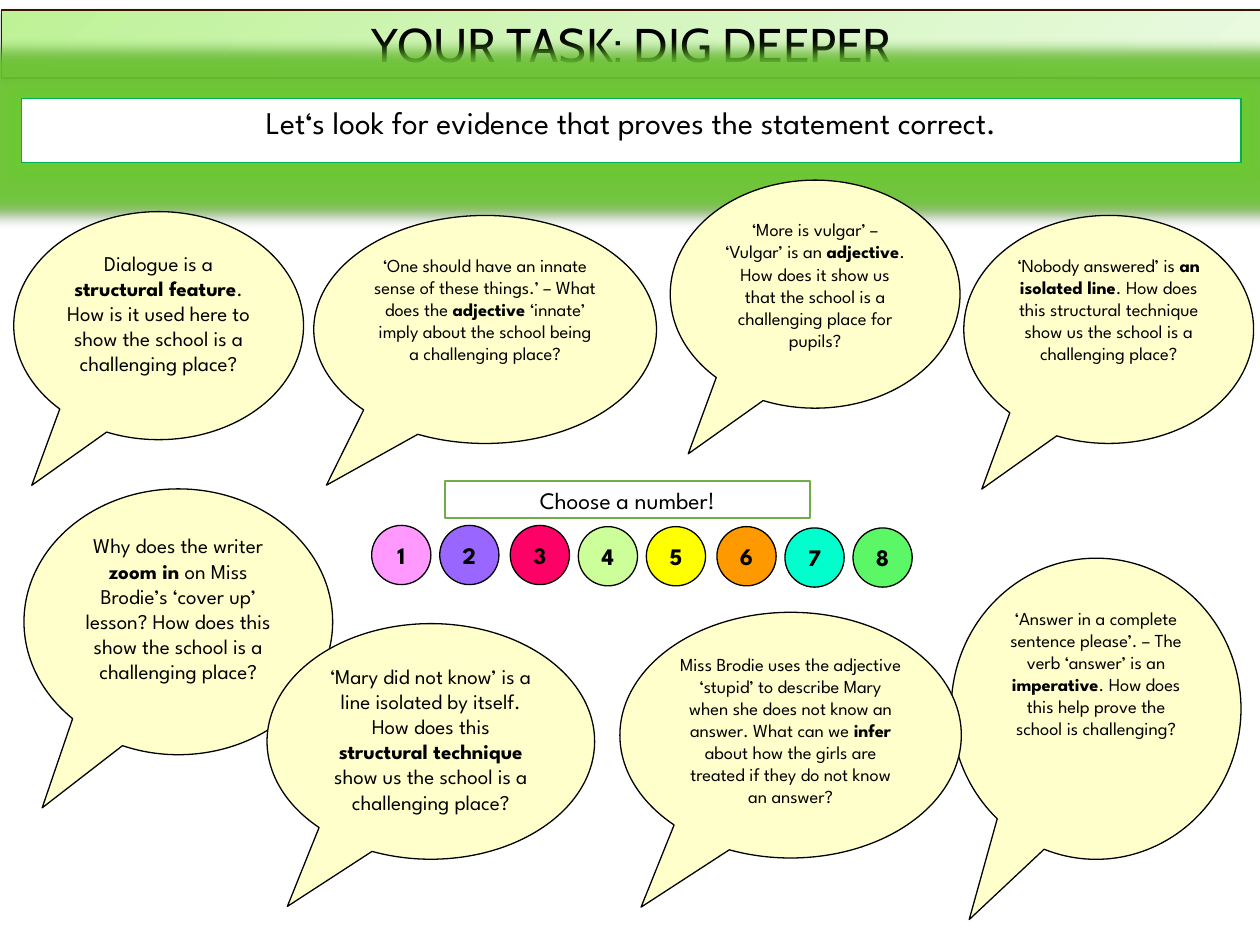
"""Build the "Dig deeper" task slide with speech bubbles and numbered circles."""
import pptx
import pptx.dml.color
import pptx.enum.shapes
import pptx.enum.text
import pptx.oxml
import pptx.oxml.ns
import pptx.util

Inches, Pt = pptx.util.Inches, pptx.util.Pt
SHAPE = pptx.enum.shapes.MSO_SHAPE
ANCHOR = pptx.enum.text.MSO_ANCHOR

COLORS = {
    "black": "000000", "white": "FFFFFF", "bubble": "FFFFCC",
    "title_line": "3C1301", "statement_line": "00B050",
    "choose_line": "70AD47", "glow": "6CC932",
}
TITLE_STOPS = [(0, "BEF297"), (50, "D5F6C0"), (100, "EAFAE0")]
TITLE_FONT, BODY_FONT = "Cabin", "League Spartan"
TAIL = (-0.438, 0.7)

BUBBLES = [
    ((0.11, 1.68, 2.3, 1.81), TAIL, 12,
     ("Dialogue is a ", "structural feature",
      ". How is it used here to show the school is a challenging place?")),
    ((2.49, 1.71, 2.72, 1.81), (-0.463, 0.683), 10.5,
     ("‘One should have an innate sense of these things.’ – What does the ", "adjective ",
      "‘innate’ imply about the school being a challenging place?")),
    ((5.32, 1.43, 2.3, 1.81), TAIL, 10.5,
     ("‘More is vulgar’ – ‘Vulgar’ is an ", "adjective",
      ". How does it show us that the school is a challenging place for pupils?")),
    ((0.19, 3.88, 2.45, 2.11), (-0.441, 0.7), 12,
     ("Why does the writer ", "zoom in",
      " on Miss Brodie’s ‘cover up’ lesson? How does this show the school is a challenging place?")),
    ((7.65, 1.71, 2.3, 1.81), TAIL, 10.5,
     ("‘Nobody answered’ is ", "an isolated line",
      ". How does this structural technique show us the school is a challenging place?")),
    ((7.55, 4.43, 2.3, 2.39), TAIL, 10.5,
     ("‘Answer in a complete sentence please’. – The verb ‘answer’ is an ", "imperative",
      ". How does this help prove the school is challenging?")),
    ((2.12, 4.95, 2.6, 1.87), TAIL, 12,
     ("‘Mary did not know’ is a line isolated by itself. How does this ", "structural technique",
      " show us the school is a challenging place?")),
    ((4.92, 4.86, 2.71, 1.95), TAIL, 10.5,
     ("Miss Brodie uses the adjective ‘stupid’ to describe Mary when she does not know an answer. "
      "What can we ", "infer",
      " about how the girls are treated if they do not know an answer?")),
]
CIRCLE_SIZE = 0.47
CIRCLES = [
    (2.95, 4.17, "FF99FF"), (3.49, 4.17, "9966FF"), (4.05, 4.17, "FF0066"),
    (4.59, 4.18, "CCFF99"), (5.13, 4.18, "FFFF00"), (5.69, 4.18, "FF9900"),
    (6.23, 4.19, "00FFCC"), (6.77, 4.19, "5BF766"),
]


def rgb(value):
    return pptx.dml.color.RGBColor.from_string(value)


def add_box(slide, kind, box, fill, line, parts, size, font=BODY_FONT,
            bold=(False, True, False), anchor=ANCHOR.TOP, width=0.75, wrap=True):
    sp = slide.shapes.add_shape(kind, *map(Inches, box))
    sp.shadow.inherit = False
    sp.fill.solid()
    sp.fill.fore_color.rgb = rgb(fill)
    sp.line.color.rgb = rgb(line)
    sp.line.width = Pt(width)
    tf = sp.text_frame
    tf.word_wrap = wrap
    tf.vertical_anchor = anchor
    tf.margin_left = tf.margin_right = Inches(0.08)
    tf.margin_top = tf.margin_bottom = Inches(0.04)
    p = tf.paragraphs[0]
    p.alignment = pptx.enum.text.PP_ALIGN.CENTER
    for text, is_bold in zip(parts, bold):
        r = p.add_run()
        r.text = text
        r.font.name = font
        r.font.size = Pt(size)
        r.font.bold = is_bold
        r.font.color.rgb = rgb(COLORS["black"])
    return sp


def parse_xml(xml):
    return pptx.oxml.parse_xml(xml.replace(">", " " + pptx.oxml.ns.nsdecls("a") + ">", 1))


def add_effects(sp, glow=None):
    effects = sp._element.spPr.find(pptx.oxml.ns.qn("a:effectLst"))
    if glow:
        effects.append(parse_xml(
            f'<a:glow rad="{Pt(18)}"><a:srgbClr val="{glow}">'
            '<a:alpha val="90000"/></a:srgbClr></a:glow>'))
    effects.append(parse_xml(
        f'<a:outerShdw blurRad="{Pt(3.1)}" dist="{Pt(1.6)}" dir="5400000" rotWithShape="0">'
        f'<a:srgbClr val="{COLORS["black"]}"><a:alpha val="38000"/></a:srgbClr></a:outerShdw>'))


def set_gradient(sp, stops):
    stop_xml = "".join(f'<a:gs pos="{pos * 1000}"><a:srgbClr val="{color}"/></a:gs>'
                       for pos, color in stops)
    spPr = sp._element.spPr
    spPr.replace(spPr.find(pptx.oxml.ns.qn("a:solidFill")), parse_xml(
        f'<a:gradFill><a:gsLst>{stop_xml}</a:gsLst>'
        '<a:lin ang="2700000" scaled="0"/></a:gradFill>'))


def main():
    prs = pptx.Presentation()
    prs.slide_width, prs.slide_height = Inches(10), Inches(7.5)
    slide = prs.slides.add_slide(prs.slide_layouts[6])

    title = add_box(slide, SHAPE.RECTANGLE, (0.01, 0.08, 10, 0.54), TITLE_STOPS[0][1],
                    COLORS["title_line"], ["YOUR TASK: DIG DEEPER"], 27, TITLE_FONT)
    set_gradient(title, TITLE_STOPS)
    add_effects(title)
    statement = add_box(slide, SHAPE.RECTANGLE, (0.17, 0.78, 9.68, 0.51), COLORS["white"],
                        COLORS["statement_line"],
                        ["Let‘s look for evidence that proves the statement correct."], 18)
    add_effects(statement, COLORS["glow"])

    for box, tail, size, parts in BUBBLES:
        sp = add_box(slide, SHAPE.OVAL_CALLOUT, box, COLORS["bubble"], COLORS["black"],
                     parts, size)
        sp.adjustments[0], sp.adjustments[1] = tail

    for number, (left, top, color) in enumerate(CIRCLES, 1):
        add_box(slide, SHAPE.OVAL, (left, top, CIRCLE_SIZE, CIRCLE_SIZE), color,
                COLORS["black"], [str(number)], 13.5, bold=[True],
                anchor=ANCHOR.MIDDLE, wrap=False)

    add_box(slide, SHAPE.RECTANGLE, (3.53, 3.82, 2.9, 0.29), COLORS["white"],
            COLORS["choose_line"], ["Choose a number!"], 13.5, anchor=ANCHOR.MIDDLE, width=1)
    prs.save("out.pptx")


if __name__ == "__main__":
    main()
